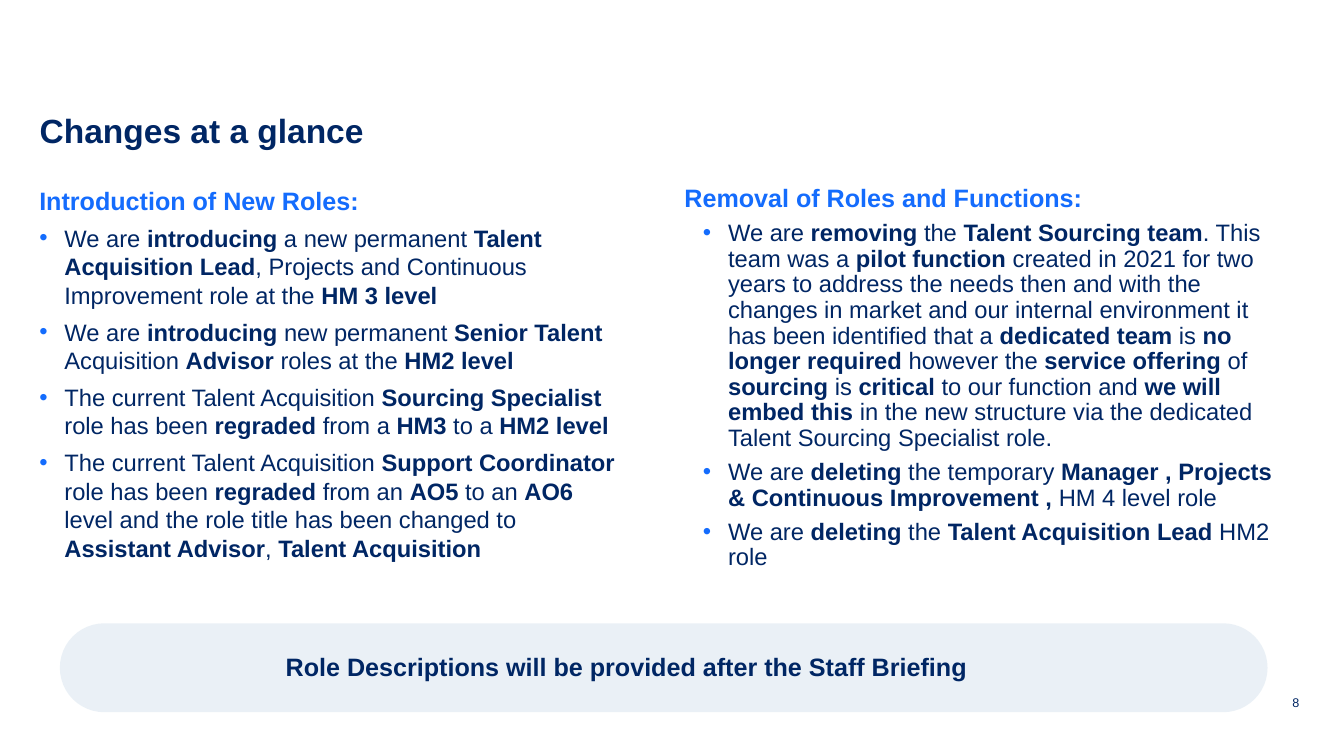
from lxml.etree import SubElement
from pptx import Presentation
from pptx.dml.color import RGBColor
from pptx.enum.shapes import MSO_SHAPE as Shape
from pptx.enum.text import MSO_ANCHOR as Anchor, PP_ALIGN as Align
from pptx.oxml.ns import qn
from pptx.util import Pt

NAVY = RGBColor(0x00, 0x26, 0x64)
BLUE = RGBColor(0x14, 0x6C, 0xFD)
PALE = RGBColor(0xC7, 0xD9, 0xE7)
FONT = "Arial"
BOLD_MARK = "**"
HANGING = 36

TITLE = "Changes at a glance"
NOTICE = "Role Descriptions will be provided after the Staff Briefing"
PAGE = "8"
COLUMNS = [
    {
        "heading": "Introduction of New Roles:",
        "box": (56.2, 265, 843, 605.5),
        "margin": 36,
        "spacing": 1.0,
        "bullets": [
            "We are **introducing** a new permanent **Talent Acquisition Lead**, Projects and "
            "Continuous Improvement role at the **HM 3 level**",
            "We are **introducing **new permanent **Senior Talent **Acquisition **Advisor** roles "
            "at the **HM2 level**",
            "The current Talent Acquisition **Sourcing Specialist **role has been **regraded **"
            "from a **HM3** to a **HM2 level**",
            "The current Talent Acquisition **Support Coordinator **role has been **regraded** "
            "from an **AO5 **to an **AO6 **level and the role title has been changed to "
            "**Assistant Advisor**,** Talent Acquisition**",
        ],
    },
    {
        "heading": "Removal of Roles and Functions:",
        "box": (980, 265.7, 849, 604),
        "margin": 62.6,
        "spacing": 0.9,
        "bullets": [
            "We are **removing** the **Talent Sourcing team**. This team was a **pilot function **"
            "created in 2021 for two years to address the needs then and with the changes in "
            "market and our internal environment it has been identified that a **dedicated team **"
            "is **no longer required **however the **service offering **of **sourcing** is "
            "**critical** to our function and **we will embed this **in the new structure via "
            "the dedicated Talent Sourcing Specialist role.",
            "We are** deleting **the temporary **Manager , Projects & Continuous Improvement , **"
            "HM 4 level role",
            "We are **deleting** the **Talent Acquisition Lead **HM2 role",
        ],
    },
]


def add_frame(slide, box, anchor=Anchor.TOP, inset=0):
    frame = slide.shapes.add_textbox(*map(Pt, box)).text_frame
    frame.word_wrap = True
    frame.vertical_anchor = anchor
    frame.margin_left = frame.margin_right = Pt(inset)
    frame.margin_top = frame.margin_bottom = Pt(inset / 2)
    return frame


def add_runs(paragraph, text, size, color, bold=False):
    for index, part in enumerate(text.split(BOLD_MARK)):
        if part:
            run = paragraph.add_run()
            run.text = part
            run.font.name = FONT
            run.font.size = Pt(size)
            run.font.bold = bold or index % 2 == 1
            run.font.color.rgb = color


def add_bullet(paragraph, margin):
    properties = paragraph._p.get_or_add_pPr()
    properties.set("marL", str(Pt(margin)))
    properties.set("indent", str(-Pt(HANGING)))
    color = SubElement(properties, qn("a:buClr"))
    SubElement(color, qn("a:srgbClr"), val=str(BLUE))
    SubElement(properties, qn("a:buFont"), typeface=FONT)
    SubElement(properties, qn("a:buChar"), char="•")


def add_column(slide, column):
    frame = add_frame(slide, column["box"])
    heading = frame.paragraphs[0]
    heading.line_spacing = column["spacing"]
    heading.space_after = Pt(6)
    add_runs(heading, column["heading"], 36, BLUE, True)
    for text in column["bullets"]:
        paragraph = frame.add_paragraph()
        paragraph.line_spacing = column["spacing"]
        paragraph.space_before = paragraph.space_after = Pt(6)
        add_bullet(paragraph, column["margin"])
        add_runs(paragraph, text, 34, NAVY)


def add_band(slide, box):
    band = slide.shapes.add_shape(Shape.ROUNDED_RECTANGLE, *map(Pt, box))
    band.adjustments[0] = 0.5
    band.shadow.inherit = False
    band.line.fill.background()
    band.fill.solid()
    band.fill.fore_color.rgb = PALE
    color = band._element.spPr.find(qn("a:solidFill"))[0]
    SubElement(color, qn("a:alpha"), val="37000")


def main():
    presentation = Presentation()
    presentation.slide_width, presentation.slide_height = Pt(1924.56), Pt(1080)
    slide = presentation.slides.add_slide(presentation.slide_layouts[6])

    title = add_frame(slide, (56.9, 164.2, 1809.4, 42.5)).paragraphs[0]
    title.line_spacing = 0.9
    add_runs(title, TITLE, 48, NAVY, True)

    for column in COLUMNS:
        add_column(slide, column)

    page = add_frame(slide, (1787, 991.4, 80.6, 28.8), Anchor.MIDDLE, 7.2).paragraphs[0]
    page.alignment = Align.RIGHT
    add_runs(page, PAGE, 18, NAVY)

    add_band(slide, (85.7, 892.8, 1729.4, 127.4))
    notice = add_frame(slide, (131.8, 890.6, 1530.7, 127.4), Anchor.MIDDLE, 7.2).paragraphs[0]
    notice.alignment = Align.CENTER
    add_runs(notice, NOTICE, 36, NAVY, True)

    presentation.save("out.pptx")


if __name__ == "__main__":
    main()
